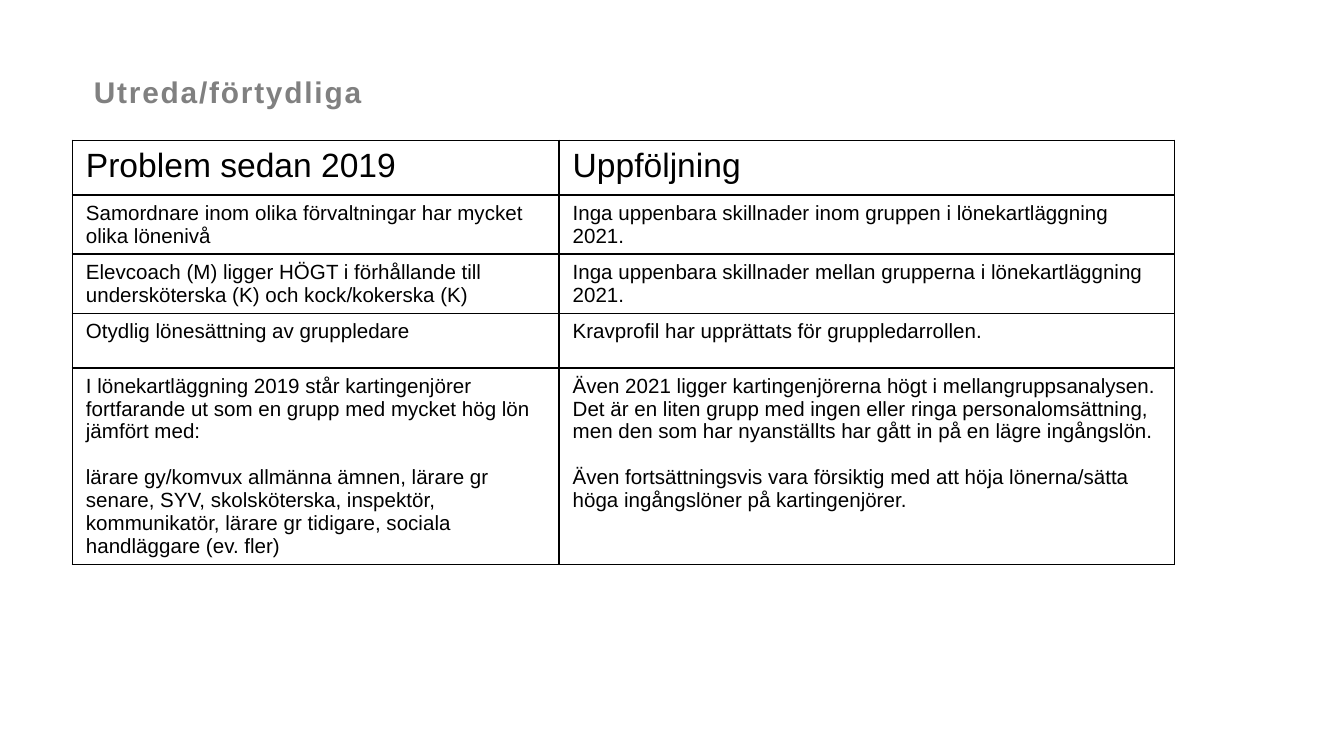
import pptx
import pptx.dml.color
import pptx.enum.text
import pptx.oxml
import pptx.oxml.ns
import pptx.util
from pptx.util import Cm, Pt

BLACK = pptx.dml.color.RGBColor(0x00, 0x00, 0x00)
GREY = pptx.dml.color.RGBColor(0x80, 0x80, 0x80)
FONT = "Arial"

TITLE = "Utreda/förtydliga"
HEADER = ("Problem sedan 2019", "Uppföljning")
# Each cell is a list of blocks; each block is a list of paragraphs.
ROWS = [
    ([["Samordnare inom olika förvaltningar har mycket olika lönenivå"]],
     [["Inga uppenbara skillnader inom gruppen i lönekartläggning 2021."]]),
    ([["Elevcoach (M) ligger HÖGT i förhållande till undersköterska (K) "
       "och kock/kokerska (K)"]],
     [["Inga uppenbara skillnader mellan grupperna i lönekartläggning 2021."]]),
    ([["Otydlig lönesättning av gruppledare"]],
     [["Kravprofil har upprättats för gruppledarrollen."]]),
    ([["I lönekartläggning 2019 står kartingenjörer fortfarande ut som en grupp "
       "med mycket hög lön jämfört med:"],
      ["lärare gy/komvux allmänna ämnen, lärare gr senare, SYV, skolsköterska, "
       "inspektör, kommunikatör, lärare gr tidigare, sociala handläggare (ev. fler)"]],
     [["Även 2021 ligger kartingenjörerna högt i mellangruppsanalysen.",
       "Det är en liten grupp med ingen eller ringa personalomsättning, men den "
       "som har nyanställts har gått in på en lägre ingångslön."],
      ["Även fortsättningsvis vara försiktig med att höja lönerna/sätta höga "
       "ingångslöner på kartingenjörer."]]),
]
COLUMN_WIDTHS = (Cm(9.2), Cm(11.63))
ROW_HEIGHT = Cm(1.03)
BLOCK_GAP = Pt(12.3)


def style(font, size, color, bold=False):
    font.name, font.size, font.bold = FONT, Pt(size), bold
    font.color.rgb = color


def add_borders(cell):
    tcPr = cell._tc.get_or_add_tcPr()
    for side in ("lnL", "lnR", "lnT", "lnB"):
        tcPr.append(pptx.oxml.parse_xml(
            f'<a:{side} {pptx.oxml.ns.nsdecls("a")} w="12700"><a:solidFill>'
            f'<a:srgbClr val="{BLACK}"/></a:solidFill></a:{side}>'))


def fill_cell(cell, blocks, size):
    add_borders(cell)
    cell.fill.background()
    tf = cell.text_frame
    tf.text = "\n".join(text for block in blocks for text in block)
    paragraphs = iter(tf.paragraphs)
    for b, block in enumerate(blocks):
        for i in range(len(block)):
            p = next(paragraphs)
            style(p.font, size, BLACK)
            if b and i == 0:
                p.space_before = BLOCK_GAP


def add_title(s):
    title = s.shapes.title
    title.left, title.top, title.width, title.height = Cm(1.52), Cm(1.27), Cm(17.86), Cm(0.58)
    tf = title.text_frame
    tf.text = TITLE
    tf.auto_size = pptx.enum.text.MSO_AUTO_SIZE.NONE
    tf.vertical_anchor = pptx.enum.text.MSO_ANCHOR.TOP
    p = tf.paragraphs[0]
    p.alignment = pptx.enum.text.PP_ALIGN.LEFT
    style(p.font, 16, GREY, bold=True)
    p.runs[0].font._element.set("spc", "100")


def add_follow_up_table(s):
    rows = [tuple([[text]] for text in HEADER)] + ROWS
    table = s.shapes.add_table(
        len(rows), len(HEADER), Cm(1.37), Cm(2.65),
        sum(COLUMN_WIDTHS), ROW_HEIGHT * len(rows)).table
    table.first_row = table.horz_banding = False
    for column, width in zip(table.columns, COLUMN_WIDTHS):
        column.width = width
    for r, row in enumerate(rows):
        table.rows[r].height = ROW_HEIGHT
        for c, blocks in enumerate(row):
            fill_cell(table.cell(r, c), blocks, 11 if r else 18)


def main():
    prs = pptx.Presentation()
    prs.slide_width, prs.slide_height = Cm(25.4), Cm(14.28)
    s = prs.slides.add_slide(prs.slide_layouts[5])
    add_title(s)
    add_follow_up_table(s)
    prs.save("out.pptx")


if __name__ == "__main__":
    main()
